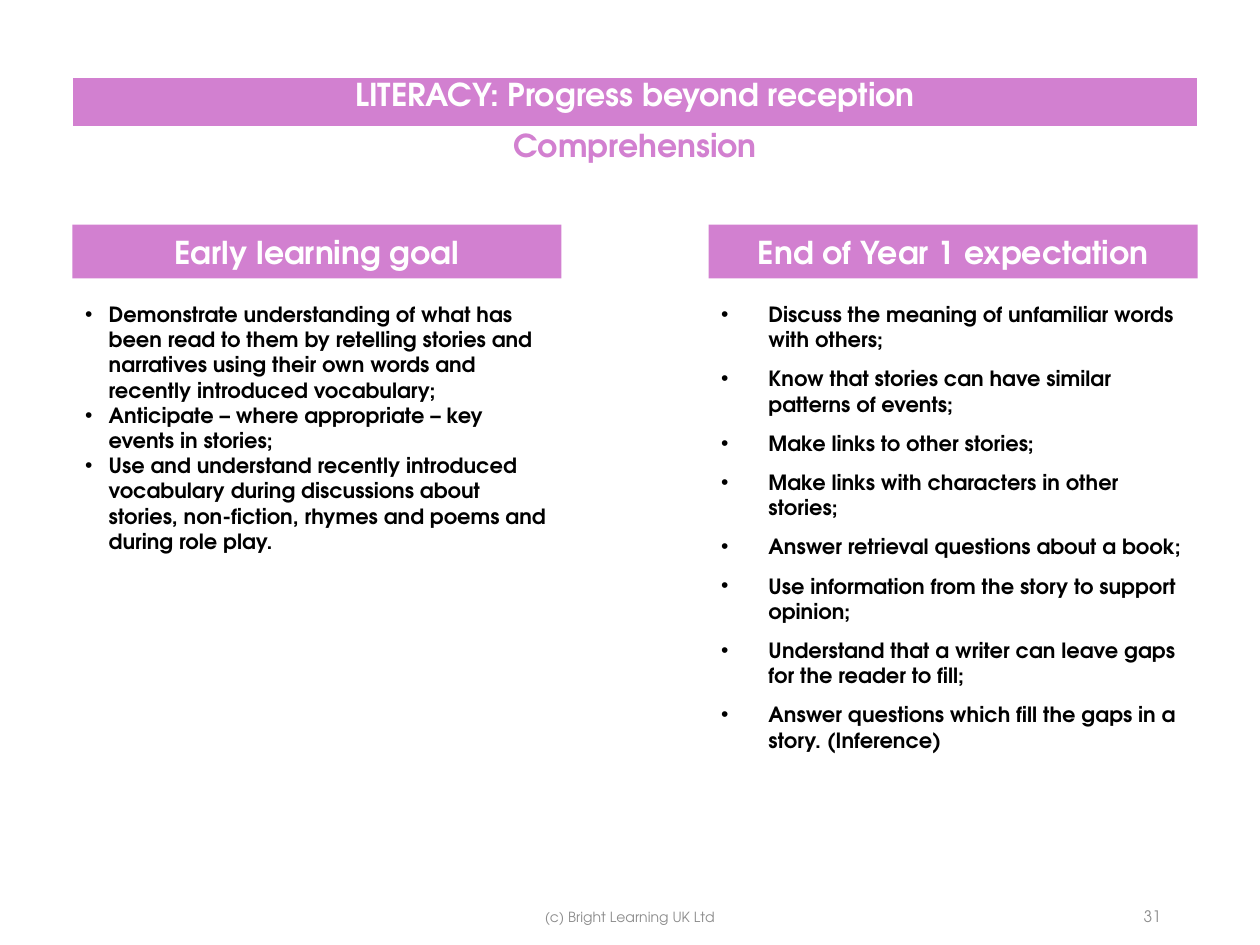
from dataclasses import dataclass

from lxml import etree
from pptx import Presentation
from pptx.dml.color import RGBColor
from pptx.enum.shapes import MSO_SHAPE
from pptx.enum.text import MSO_ANCHOR, MSO_AUTO_SIZE, PP_ALIGN
from pptx.oxml.ns import qn
from pptx.util import Pt

RECTANGLE = MSO_SHAPE.RECTANGLE
TOP, MIDDLE = MSO_ANCHOR.TOP, MSO_ANCHOR.MIDDLE
LEFT, CENTER, RIGHT = PP_ALIGN.LEFT, PP_ALIGN.CENTER, PP_ALIGN.RIGHT
NO_AUTOFIT = MSO_AUTO_SIZE.NONE


@dataclass(frozen=True)
class Theme:
    font: str = "TeX Gyre Adventor"
    accent: RGBColor = RGBColor(0xD2, 0x80, 0xD0)
    white: RGBColor = RGBColor(0xFF, 0xFF, 0xFF)
    black: RGBColor = RGBColor(0, 0, 0)
    grey: RGBColor = RGBColor(0x8C, 0x8C, 0x8C)
    heading_size: float = 18
    body_size: float = 12
    footer_size: float = 8
    number_size: float = 9


@dataclass(frozen=True)
class Column:
    heading: str
    points: tuple[str, ...]
    left: float
    height: float
    indent: float
    space_after: float


@dataclass(frozen=True)
class Note:
    text: str
    left: float
    top: float
    width: float
    size: float
    align: PP_ALIGN


THEME = Theme()
MARGIN_LEFT = 41.4
TABLE_TOP, TABLE_WIDTH, ROW_HEIGHT = 44, 643, 29.25
CELL_MARGIN = 3.6
COLUMN_WIDTH = 279.5
HEADING_TOP, HEADING_HEIGHT = 128.4, 30.75
LIST_TOP = 168.75
NOTE_HEIGHT = 29

COLUMNS = (
    Column("Early learning goal", (
        "Demonstrate understanding of what has been read to them by retelling stories "
        "and narratives using their own words and recently introduced vocabulary;",
        "Anticipate – where appropriate – key events in stories;",
        "Use and understand recently introduced vocabulary during discussions about "
        "stories, non-fiction, rhymes and poems and during role play.",
    ), MARGIN_LEFT, 150.5, 13.5, 0),
    Column("End of Year 1 expectation", (
        "Discuss the meaning of unfamiliar words with others;",
        "Know that stories can have similar patterns of events;",
        "Make links to other stories;",
        "Make links with characters in other stories;",
        "Answer retrieval questions about a book;",
        "Use information from the story to support opinion;",
        "Understand that a writer can leave gaps for the reader to fill;",
        "Answer questions which fill the gaps in a story. (Inference)",
    ), MARGIN_LEFT + TABLE_WIDTH - COLUMN_WIDTH, 281.5, 27, 8),
)

NOTES = (
    Note("(c) Bright Learning UK Ltd", 238.5, 509.5, 243, THEME.footer_size, CENTER),
    Note("31", 508.5, 509, 162, THEME.number_size, RIGHT),
)


def style(para, size: float, color: RGBColor, align: PP_ALIGN, bold: bool = True) -> None:
    para.alignment = align
    para.font.name = THEME.font
    para.font.size = Pt(size)
    para.font.bold = bold
    para.font.color.rgb = color


def set_borders(cell, top: float, bottom: float) -> None:
    """Give a cell white borders, in the order the schema asks for."""
    properties = cell._tc.get_or_add_tcPr()
    sides = (("a:lnL", 1), ("a:lnR", 1), ("a:lnT", top), ("a:lnB", bottom))
    for position, (tag, width) in enumerate(sides):
        line = etree.Element(qn(tag), w=str(Pt(width)))
        fill = etree.SubElement(line, qn("a:solidFill"))
        etree.SubElement(fill, qn("a:srgbClr"), val=str(THEME.white))
        properties.insert(position, line)


def add_title_table(page) -> None:
    table = page.shapes.add_table(
        2, 1, Pt(MARGIN_LEFT), Pt(TABLE_TOP), Pt(TABLE_WIDTH), Pt(2 * ROW_HEIGHT)).table
    rows = (
        ("LITERACY: Progress beyond reception", THEME.white, 1, 3),
        ("Comprehension", THEME.accent, 3, 1),
    )
    for index, (text, color, top, bottom) in enumerate(rows):
        cell = table.cell(index, 0)
        cell.text = text
        cell.margin_top = cell.margin_bottom = Pt(CELL_MARGIN)
        cell.vertical_anchor = TOP
        style(cell.text_frame.paragraphs[0], THEME.heading_size, color, CENTER)
        if index == 0:
            cell.fill.solid()
            cell.fill.fore_color.rgb = THEME.accent
        else:
            cell.fill.background()
        set_borders(cell, top, bottom)


def add_heading(page, column: Column) -> None:
    box = page.shapes.add_shape(RECTANGLE, Pt(column.left), Pt(HEADING_TOP),
                                Pt(COLUMN_WIDTH), Pt(HEADING_HEIGHT))
    box.shadow.inherit = False
    box.fill.solid()
    box.fill.fore_color.rgb = THEME.accent
    box.line.fill.background()
    box.text_frame.text = column.heading
    box.text_frame.vertical_anchor = MIDDLE
    style(box.text_frame.paragraphs[0], THEME.heading_size, THEME.white, CENTER)


def fill_list(box, column: Column) -> None:
    box.left, box.top = Pt(column.left), Pt(LIST_TOP)
    box.width, box.height = Pt(COLUMN_WIDTH), Pt(column.height)
    frame = box.text_frame
    frame.auto_size = NO_AUTOFIT
    frame.vertical_anchor = TOP
    frame.text = "\n".join(column.points)
    for para in frame.paragraphs:
        style(para, THEME.body_size, THEME.black, LEFT)
        para.space_before = Pt(0)
        para.space_after = Pt(column.space_after)
        properties = para._p.get_or_add_pPr()
        properties.set("marL", str(Pt(column.indent)))
        properties.set("indent", str(-Pt(column.indent)))


def add_note(page, note: Note) -> None:
    box = page.shapes.add_textbox(Pt(note.left), Pt(note.top), Pt(note.width), Pt(NOTE_HEIGHT))
    box.text_frame.word_wrap = True
    box.text_frame.vertical_anchor = MIDDLE
    box.text_frame.text = note.text
    style(box.text_frame.paragraphs[0], note.size, THEME.grey, note.align, bold=False)


def main() -> None:
    deck = Presentation()
    deck.slide_width, deck.slide_height = Pt(720), Pt(540)
    page = deck.slides.add_slide(deck.slide_layouts[3])

    # The table carries the title, so its placeholder goes
    title = page.shapes.title.element
    title.getparent().remove(title)
    add_title_table(page)

    # Two columns: heading bar over a bulleted list
    for box, column in zip(list(page.placeholders), COLUMNS):
        fill_list(box, column)
        add_heading(page, column)

    # Footer and page number
    for note in NOTES:
        add_note(page, note)

    deck.save("out.pptx")


if __name__ == "__main__":
    main()
